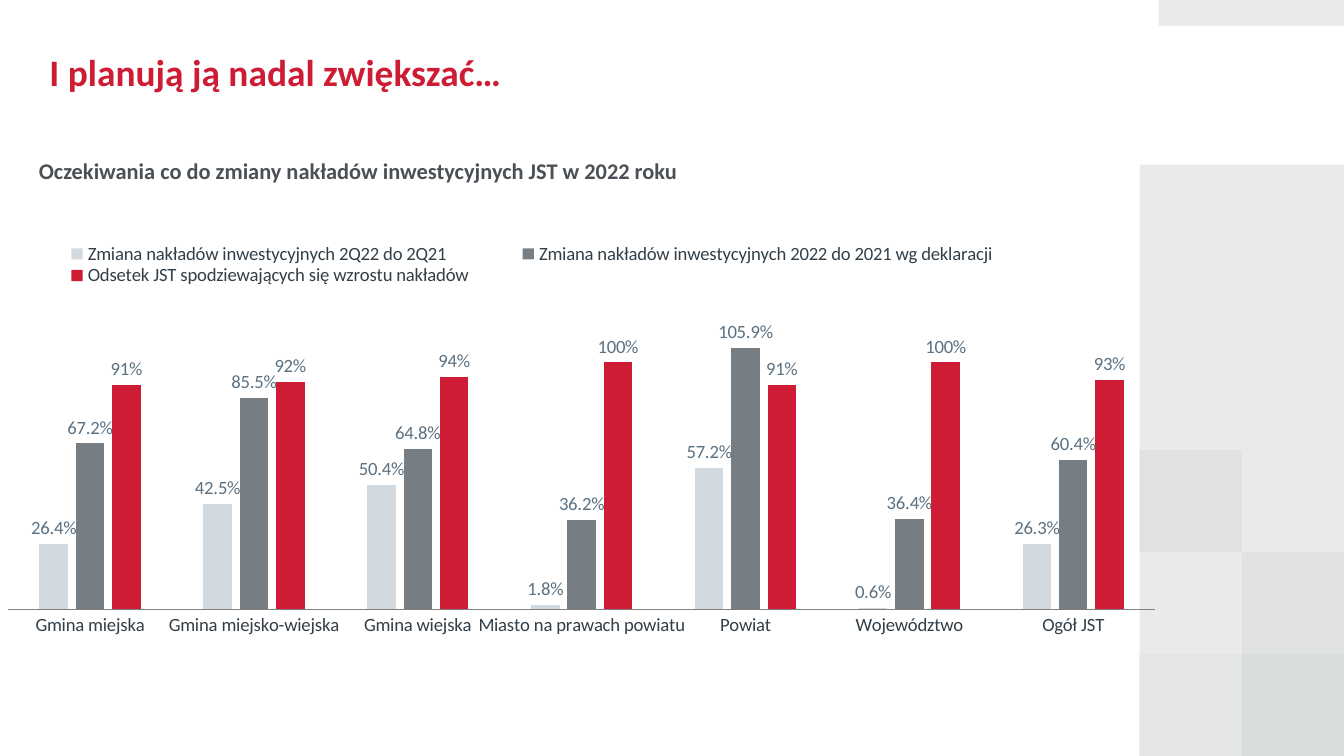
from lxml import etree
from pptx import Presentation
from pptx.chart.data import CategoryChartData
from pptx.dml.color import RGBColor
from pptx.enum.chart import XL_CHART_TYPE as ChartType
from pptx.enum.chart import XL_LABEL_POSITION as LabelPosition
from pptx.enum.chart import XL_LEGEND_POSITION as LegendPosition
from pptx.enum.chart import XL_TICK_LABEL_POSITION as TickLabel
from pptx.enum.chart import XL_TICK_MARK as TickMark
from pptx.enum.shapes import MSO_SHAPE as Shape
from pptx.enum.text import MSO_ANCHOR as Anchor
from pptx.oxml.ns import qn
from pptx.util import Inches, Pt

WIDTH = 10
HEIGHT = WIDTH * 9 / 16

RED, DARK, LABEL = "CE1C35", "333F48", "5B7181"
PALE, TILE = "E4E5E6", "D7DADB"

CATEGORIES = ["Gmina miejska", "Gmina miejsko-wiejska", "Gmina wiejska",
              "Miasto na prawach powiatu", "Powiat", "Województwo", "Ogół JST"]
# Name, colour, label format, values
SERIES = [
    ("Zmiana nakładów inwestycyjnych 2Q22 do 2Q21", "D2D9DF", "0.0%",
     [0.264, 0.425, 0.504, 0.018, 0.572, 0.006, 0.263]),
    ("Zmiana nakładów inwestycyjnych 2022 do 2021 wg deklaracji", "767E84", "0.0%",
     [0.672, 0.855, 0.648, 0.362, 1.059, 0.364, 0.604]),
    ("Odsetek JST spodziewających się wzrostu nakładów", RED, "0%",
     [0.91, 0.92, 0.94, 1, 0.91, 1, 0.93]),
]


def rgb(value):
    return RGBColor.from_string(value)


def place(parent, index, box, inner=False):
    """Give a chart part a fixed layout, in fractions of the chart."""
    for old in parent.findall(qn("c:layout")):
        parent.remove(old)
    layout = etree.Element(qn("c:layout"))
    manual = etree.SubElement(layout, qn("c:manualLayout"))
    settings = [("layoutTarget", "inner")] if inner else []
    settings += [("xMode", "edge"), ("yMode", "edge")]
    settings += zip("xywh", box)
    for tag, value in settings:
        etree.SubElement(manual, qn(f"c:{tag}")).set("val", str(value))
    parent.insert(index, layout)


class SlideBuilder:
    font_name = "Calibri"

    def __init__(self, slide):
        self.slide = slide

    def style(self, font, size, color, bold=False):
        font.name = self.font_name
        font.size = Pt(size)
        font.bold = bold
        font.color.rgb = rgb(color)

    def block(self, left, top, width, height, color, opacity):
        shape = self.slide.shapes.add_shape(
            Shape.RECTANGLE, Inches(left), Inches(top), Inches(width), Inches(height))
        shape.shadow.inherit = False
        shape.line.fill.background()
        shape.fill.solid()
        shape.fill.fore_color.rgb = rgb(color)
        fill_color = shape.fill._xPr.find(qn("a:solidFill"))[0]
        etree.SubElement(fill_color, qn("a:alpha")).set("val", str(opacity * 1000))

    def text(self, left, top, width, height, words, size, color, anchor=Anchor.TOP):
        box = self.slide.shapes.add_textbox(
            Inches(left), Inches(top), Inches(width), Inches(height))
        frame = box.text_frame
        frame.word_wrap = True
        frame.vertical_anchor = anchor
        frame.text = words
        self.style(frame.paragraphs[0].runs[0].font, size, color, bold=True)

    def column_chart(self, left, top, width, height):
        data = CategoryChartData()
        data.categories = CATEGORIES
        for name, _, number_format, values in SERIES:
            data.add_series(name, values, number_format)
        chart = self.slide.shapes.add_chart(
            ChartType.COLUMN_CLUSTERED, Inches(left), Inches(top),
            Inches(width), Inches(height), data).chart
        self.style(chart.font, 10, DARK)
        chart.has_title = False

        # Legend and plot positions
        chart.has_legend = True
        chart.legend.position = LegendPosition.TOP
        chart.legend.include_in_layout = False
        self.style(chart.legend.font, 10, DARK)
        place(chart.legend._element, 1, (0.02, 0.03, 0.87, 0.1))
        place(chart._chartSpace.chart.plotArea, 0, (0.007, 0.191, 0.981, 0.678), inner=True)

        # Axes
        axis = chart.category_axis
        axis.major_tick_mark = axis.minor_tick_mark = TickMark.NONE
        axis.tick_label_position = TickLabel.NEXT_TO_AXIS
        axis.format.line.color.rgb = rgb("808080")
        axis.format.line.width = Pt(0.75)
        self.style(axis.tick_labels.font, 10, DARK)
        value_axis = chart.value_axis
        value_axis.visible = False
        value_axis.has_major_gridlines = False
        value_axis.minimum_scale, value_axis.maximum_scale = 0, 1.2
        value_axis.tick_labels.number_format = "0.0%"
        value_axis.tick_labels.number_format_is_linked = False

        # Columns and their labels
        plot = chart.plots[0]
        plot.vary_by_categories = False
        plot.gap_width, plot.overlap = 219, -27
        for series, (_, color, number_format, _) in zip(plot.series, SERIES):
            series.format.fill.solid()
            series.format.fill.fore_color.rgb = rgb(color)
            labels = series.data_labels
            labels.show_value = True
            labels.position = LabelPosition.OUTSIDE_END
            labels.number_format = number_format
            labels.number_format_is_linked = False
            self.style(labels.font, 10, LABEL)


def main():
    presentation = Presentation()
    presentation.slide_width, presentation.slide_height = Inches(WIDTH), Inches(HEIGHT)
    builder = SlideBuilder(presentation.slides.add_slide(presentation.slide_layouts[6]))

    # Background blocks and square tiles
    builder.block(8.48, HEIGHT - 4.4, 1.52, 4.4, PALE, 80)
    builder.block(8.62, 0, 1.38, 0.19, PALE, 80)
    side = 0.76
    for column, row, opacity in [(1, 2, 80), (0, 2, 30), (1, 1, 50), (0, 0, 50)]:
        builder.block(8.48 + column * side, 3.35 + row * side, side, side, TILE, opacity)

    # Headings
    builder.text(0.27, 0.15, 7.54, 0.76, "I planują ją nadal zwiększać…", 20, RED, Anchor.MIDDLE)
    builder.text(0.19, 1.12, 5.92, 0.3,
                 "Oczekiwania co do zmiany nakładów inwestycyjnych JST w 2022 roku", 12, "4A5055")

    # Chart
    builder.column_chart(0, 1.71, 8.7, 3.25)
    presentation.save("out.pptx")


if __name__ == "__main__":
    main()
